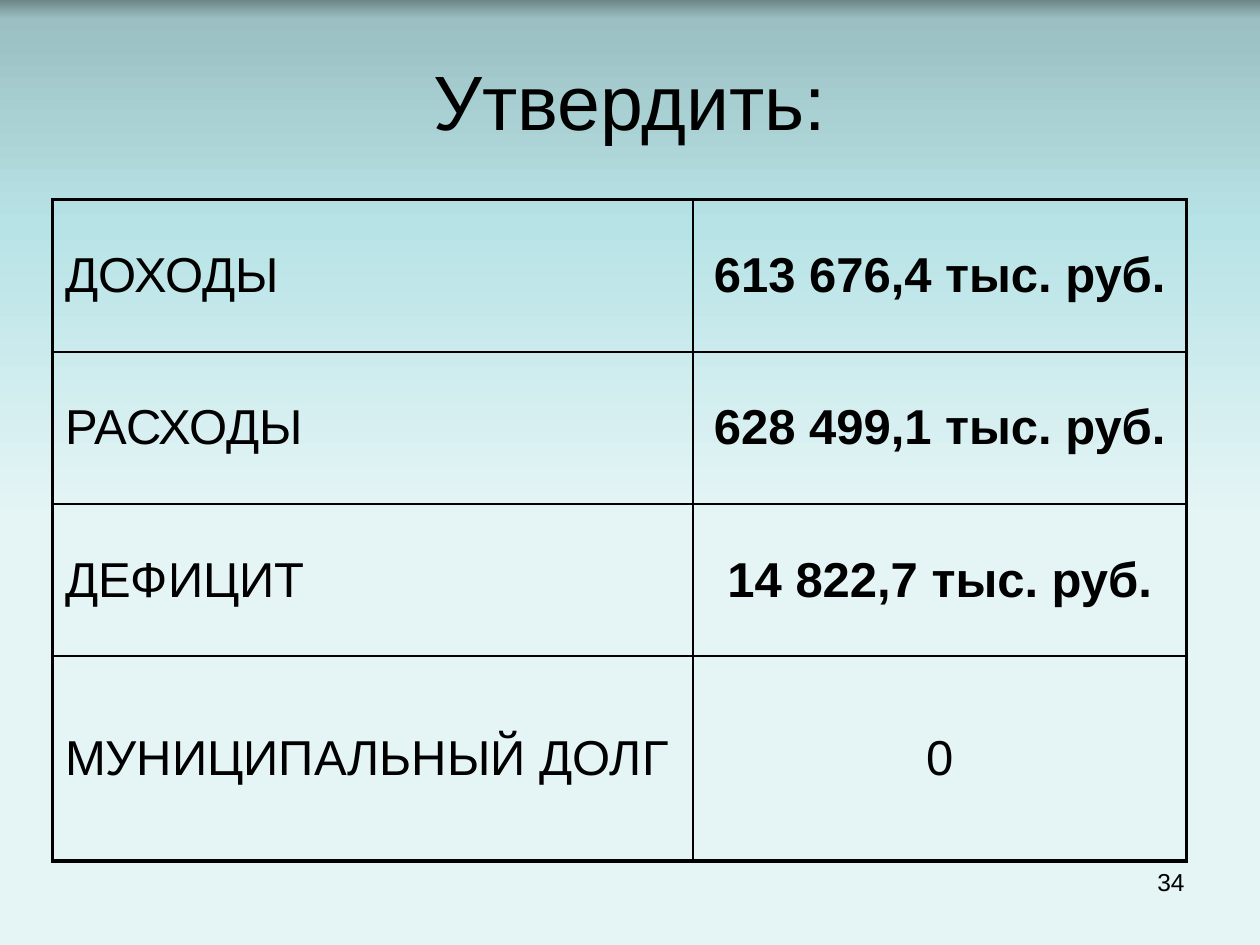
from lxml.etree import SubElement
from pptx import Presentation
from pptx.dml.color import RGBColor
from pptx.enum.text import MSO_ANCHOR as Anchor, PP_ALIGN as Align
from pptx.oxml.ns import qn
from pptx.util import Inches, Pt

UNIT = Inches(1) // 12  # the slide is a grid of 120 columns by 90 rows
BLACK = "000000"
THIN, THICK = 1, 2.25


def write_text(frame, text, size=28, bold=False, align=Align.LEFT, color=BLACK):
    frame.word_wrap = True
    paragraph = frame.paragraphs[0]
    paragraph.alignment = align
    run = paragraph.add_run()
    run.text = text
    font = run.font
    font.name, font.size, font.bold = "Arial", Pt(size), bold
    font.color.rgb = RGBColor.from_string(color)


def add_solid_color(parent, color):
    fill = SubElement(parent, qn("a:solidFill"))
    SubElement(fill, qn("a:srgbClr"), val=color)


presentation = Presentation()
presentation.slide_width, presentation.slide_height = 120 * UNIT, 90 * UNIT
slide = presentation.slides.add_slide(presentation.slide_layouts[5])

# Background gradient, from top to bottom
background = slide.background.fill
background.gradient()
background.gradient_angle = 270
stops = slide.element.find(".//" + qn("a:gsLst"))
stops.clear()
for percent, color in [(0, "6D8688"), (2, "9BBFC2"), (24, "B8E3E6"), (55, "E5F5F6"), (100, "E5F5F6")]:
    stop = SubElement(stops, qn("a:gs"), pos=str(percent * 1000))
    SubElement(stop, qn("a:srgbClr"), val=color)

# Slide number
number = slide.shapes.add_textbox(86 * UNIT, 82 * UNIT, 28 * UNIT, 6 * UNIT)
write_text(number.text_frame, "34", size=14, align=Align.RIGHT)

# Title
title = slide.shapes.title
title.left, title.top, title.width, title.height = 6 * UNIT, 4 * UNIT, 108 * UNIT, 11 * UNIT
title.text_frame.vertical_anchor = Anchor.MIDDLE
write_text(title.text_frame, "Утвердить:", size=44, align=Align.CENTER)

# Budget table
budget = [
    ("ДОХОДЫ", "613 676,4 тыс. руб."),
    ("РАСХОДЫ", "628 499,1 тыс. руб."),
    ("ДЕФИЦИТ", "14 822,7 тыс. руб."),
    ("МУНИЦИПАЛЬНЫЙ ДОЛГ", "0"),
]
column_units = [61, 47]
row_units = [14.5, 14.5, 14.5, 19.5]
last_row, last_column = len(row_units) - 1, len(column_units) - 1

table = slide.shapes.add_table(
    len(row_units), len(column_units),
    5 * UNIT, 19 * UNIT, sum(column_units) * UNIT, int(sum(row_units) * UNIT),
).table
table.first_row = table.horz_banding = False
for column, units in zip(table.columns, column_units):
    column.width = units * UNIT
for row, units in zip(table.rows, row_units):
    row.height = int(units * UNIT)

for i, labels in enumerate(budget):
    for j, label in enumerate(labels):
        cell = table.cell(i, j)
        cell.vertical_anchor = Anchor.MIDDLE
        is_amount = j == last_column
        write_text(cell.text_frame, label, bold=is_amount and i < last_row,
                   align=Align.CENTER if is_amount else Align.LEFT)
        properties = cell._tc.get_or_add_tcPr()
        outer_sides = {"L": j == 0, "R": j == last_column, "T": i == 0, "B": i == last_row}
        for side, is_outer in outer_sides.items():
            width = Pt(THICK if is_outer else THIN)
            border = SubElement(properties, qn("a:ln" + side), w=str(width))
            add_solid_color(border, BLACK)
        cell.fill.background()

presentation.save("out.pptx")
